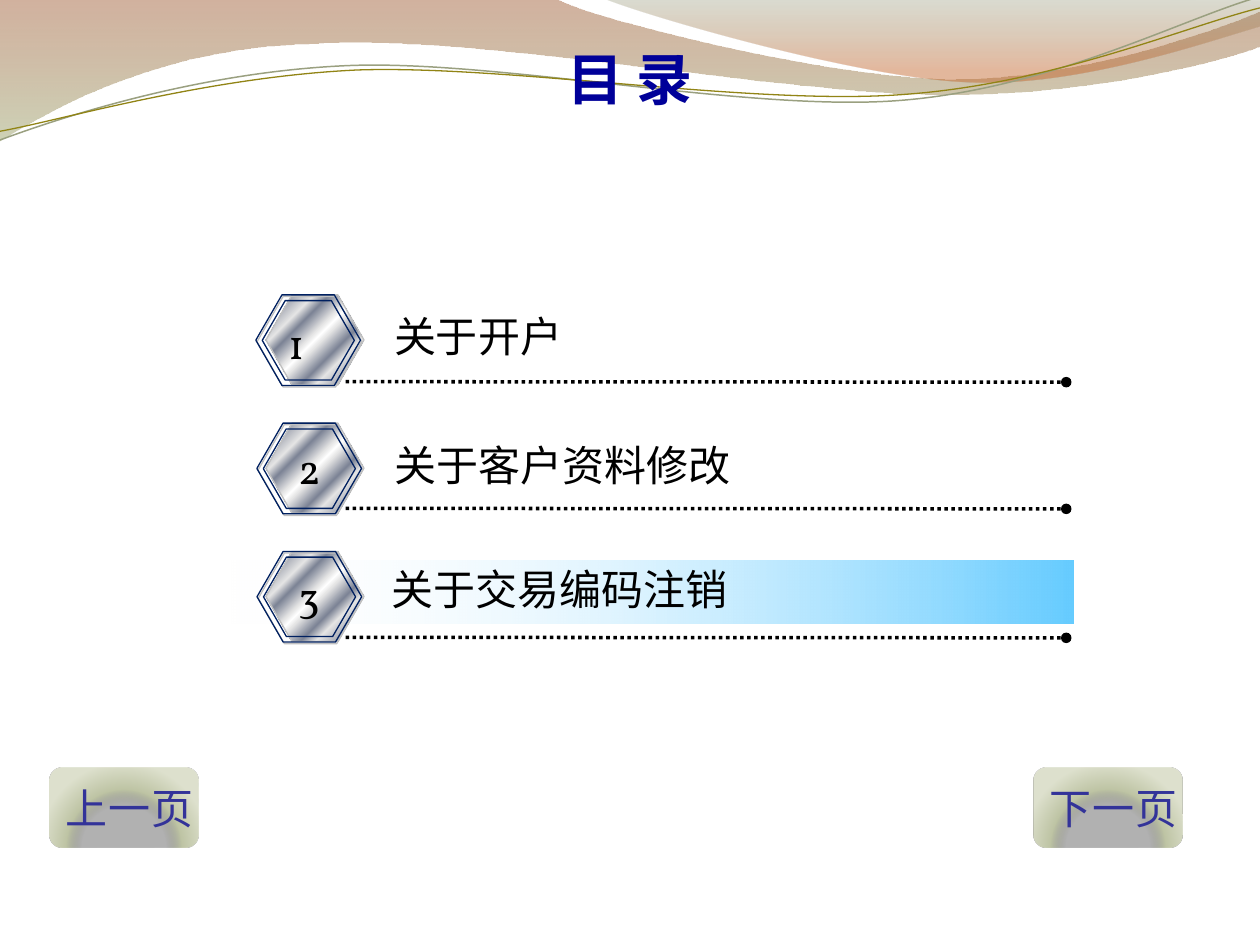
from lxml.etree import SubElement
from pptx import Presentation
from pptx.dml.color import RGBColor
from pptx.enum.dml import MSO_LINE
from pptx.enum.shapes import MSO_CONNECTOR, MSO_SHAPE
from pptx.enum.text import MSO_ANCHOR, PP_ALIGN
from pptx.oxml import parse_xml
from pptx.oxml.ns import nsdecls, qn
from pptx.util import Pt

CJK, SERIF = "Noto Sans CJK JP", "Vollkorn"
TITLE = "目 录"
# text, (left, top, width, left inset), numeral (left, top, width), ring left, rule y
ITEMS = [
    ("关于开户", (206.6, 173.8, 124.6, 18.6), (157.5, 177.8, 35.3), 146.2, 218.1),
    ("关于客户资料修改", (206.6, 247.7, 221.8, 18.6), (163.3, 249.1, 28.1), 146.8, 290.5),
    ("关于交易编码注销", (216.7, 318.7, 208, 7.2), (163.3, 322.6, 28.1), 146.9, 364.2),
]
BUTTONS = [("上一页", 28.2), ("下一页", 590.4)]

# Gradient stops: position %, colour, opacity %
METAL = [(0, "E6E6E6", 100), (8, "7D8496", 100), (26, "E6E6E6", 100),
         (34, "7D8496", 100), (46, "E6E6E6", 100), (50, "FFFFFF", 100),
         (54, "E6E6E6", 100), (66, "7D8496", 100), (74, "E6E6E6", 100),
         (92, "7D8496", 100), (100, "E6E6E6", 100)]
HIGHLIGHT = [(0, "FFFFFF", 0), (100, "66CCFF", 100)]
BUTTON = [(50, "636363", 50), (68, "BEC4A4", 100), (100, "DEE1CE", 100)]

# Each segment holds one point (straight) or three points (curve)
BANDS = [
    ([[(0, 0)], [(317, -1)],
      [(343, 12), (478, 45), (546, 45)], [(614, 45), (690, 19), (720, 6.5)],
      [(721, 26)],
      [(708, 32), (626, 55), (537, 54)], [(448, 54), (275, 20), (185, 24.5)],
      [(93, 26), (33, 60), (-1, 81)]],
     [(0, "9A542A", 45), (100, "A5AD7B", 55)]),
    ([[(345, -1)],
      [(366, 8), (491, 45), (554, 47)], [(616, 50), (692, 23), (720, 15)],
      [(720, 0)]],
     [(0, "848A67", 30), (80, "C36228", 45)]),
]
STROKES = [
    ([[(0, 80)], [(35, 67), (114, 41), (199, 37.5)],
      [(284, 34), (427, 64), (513, 57.5)], [(600, 51), (675, 11), (718.5, -1.5)]],
     "9AA080", 0.85),
    ([[(0, 75)], [(34, 69), (118, 44), (204, 40)],
      [(290, 37), (430, 60.5), (516, 54)], [(602, 48), (677.5, 15), (720, 4.5)]],
     "918415", 0.75),
]


def color(value):
    return RGBColor.from_string(value)


def set_gradient(sp, stops, angle=0, radial=False):
    sp.fill.gradient()
    sp.fill.gradient_angle = -angle % 360
    grad = sp._element.spPr.find(qn("a:gradFill"))
    gs_list = grad.find(qn("a:gsLst"))
    for gs in list(gs_list):
        gs_list.remove(gs)
    for pos, value, opacity in stops:
        gs = SubElement(gs_list, qn("a:gs"), pos=str(pos * 1000))
        clr = SubElement(gs, qn("a:srgbClr"), val=value)
        if opacity < 100:
            SubElement(clr, qn("a:alpha"), val=str(opacity * 1000))
    if radial:
        grad.replace(grad.find(qn("a:lin")), parse_xml(
            f'<a:path {nsdecls("a")} path="circle">'
            '<a:fillToRect l="50000" t="100000" r="50000"/></a:path>'))


def set_line(sp, value, width):
    sp.line.color.rgb = color(value)
    sp.line.width = Pt(width)


def add_wave(s, segments, close):
    """Build the outline from all points, then join each curve's three into one Bezier."""
    points = [(Pt(x), Pt(y)) for seg in segments for x, y in seg]
    builder = s.shapes.build_freeform(*points[0], scale=1.0)
    builder.add_line_segments(points[1:], close=close)
    sp = builder.convert_to_shape()
    sp.shadow.inherit = False
    steps = iter(list(sp._element.iter(qn("a:lnTo"))))
    for seg in segments[1:]:
        nodes = [next(steps) for _ in seg]
        if len(seg) == 3:
            curve = parse_xml(f'<a:cubicBezTo {nsdecls("a")}/>')
            nodes[0].addprevious(curve)
            for node in nodes:
                curve.append(node[0])
                node.getparent().remove(node)
    s.shapes.title._element.addprevious(sp._element)
    return sp


def add_shape(shapes, kind, x, y, w, h):
    sp = shapes.add_shape(kind, Pt(x), Pt(y), Pt(w), Pt(h))
    sp.shadow.inherit = False
    sp.fill.background()
    sp.line.fill.background()
    return sp


def add_hexagon(shapes, x, y, w, h, line):
    sp = add_shape(shapes, MSO_SHAPE.HEXAGON, x, y, w, h)
    sp.adjustments[0] = 0.289
    sp.adjustments[1] = 1.155
    set_line(sp, line, 0.75)
    return sp


def add_ring(s, x, y):
    shapes = s.shapes.add_group_shape().shapes
    add_hexagon(shapes, x + 0.7, y + 0.9, 59.8, 51.8, "C0C0C0")
    add_hexagon(shapes, x, y, 59.8, 51.8, "002060")
    add_hexagon(shapes, x + 3.7, y + 3.3, 52.6, 45.4, "002060")


def add_run(p, text, size, value, font):
    r = p.add_run()
    r.text = text
    r.font.size = Pt(size)
    r.font.name = font
    r.font.color.rgb = color(value)
    SubElement(r._r.get_or_add_rPr(), qn("a:ea"), typeface=font)
    return r


def add_label(s, text, x, y, w, inset=7.2):
    tf = s.shapes.add_textbox(Pt(x), Pt(y), Pt(w), Pt(36.5)).text_frame
    tf.word_wrap = False
    tf.margin_left = Pt(inset)
    add_run(tf.paragraphs[0], text, 24, "000000", SERIF)


def add_dotted_line(s, y):
    line = s.shapes.add_connector(
        MSO_CONNECTOR.STRAIGHT, Pt(197.5), Pt(y), Pt(609.3), Pt(y + 0.3))
    set_line(line, "000000", 2)
    line.line.dash_style = MSO_LINE.ROUND_DOT
    SubElement(line.line._get_or_add_ln(), qn("a:tailEnd"), type="oval")
    SubElement(line._element.spPr, qn("a:effectLst"))


def add_button(s, text, x):
    sp = add_shape(s.shapes, MSO_SHAPE.ROUNDED_RECTANGLE, x, 438.7, 85, 45.4)
    set_gradient(sp, BUTTON, radial=True)
    tf = sp.text_frame
    tf.word_wrap = False
    tf.vertical_anchor = MSO_ANCHOR.MIDDLE
    p = tf.paragraphs[0]
    p.alignment = PP_ALIGN.LEFT
    rpr = add_run(p, text, 24, "333399", SERIF)._r.rPr
    rpr.set("spc", "50")
    rpr.insert(0, parse_xml(
        f'<a:ln {nsdecls("a")} w="{Pt(1.06)}"><a:solidFill><a:srgbClr val="1D1B04">'
        '<a:alpha val="6000"/></a:srgbClr></a:solidFill></a:ln>'))


def main():
    prs = Presentation()
    prs.slide_width, prs.slide_height = Pt(720), Pt(540)
    s = prs.slides.add_slide(prs.slide_layouts[5])

    for segments, stops in BANDS:
        sp = add_wave(s, segments, True)
        set_gradient(sp, stops, 90)
        sp.line.fill.background()
    for segments, value, width in STROKES:
        sp = add_wave(s, segments, False)
        sp.fill.background()
        set_line(sp, value, width)

    title = s.shapes.title
    title.left, title.top, title.width, title.height = Pt(36), Pt(21.6), Pt(648), Pt(90)
    tf = title.text_frame
    tf.vertical_anchor = MSO_ANCHOR.TOP
    p = tf.paragraphs[0]
    p.alignment = PP_ALIGN.CENTER
    add_run(p, TITLE, 32, "000099", CJK).font.bold = True

    bar = add_shape(s.shapes, MSO_SHAPE.RECTANGLE, 129.6, 320.2, 483.6, 36.3)
    set_gradient(bar, HIGHLIGHT)

    for i, (text, label, numeral, ring_x, rule_y) in enumerate(ITEMS):
        y = 168.5 + 73.3 * i
        set_gradient(add_hexagon(s.shapes, 152, y, 56, 51.5, "C0C0C0"), METAL, 45)
        add_dotted_line(s, rule_y)
        add_label(s, text, *label)
        add_ring(s, ring_x, y)
        add_label(s, str(i + 1), *numeral)

    for text, x in BUTTONS:
        add_button(s, text, x)
    prs.save("out.pptx")


if __name__ == "__main__":
    main()
